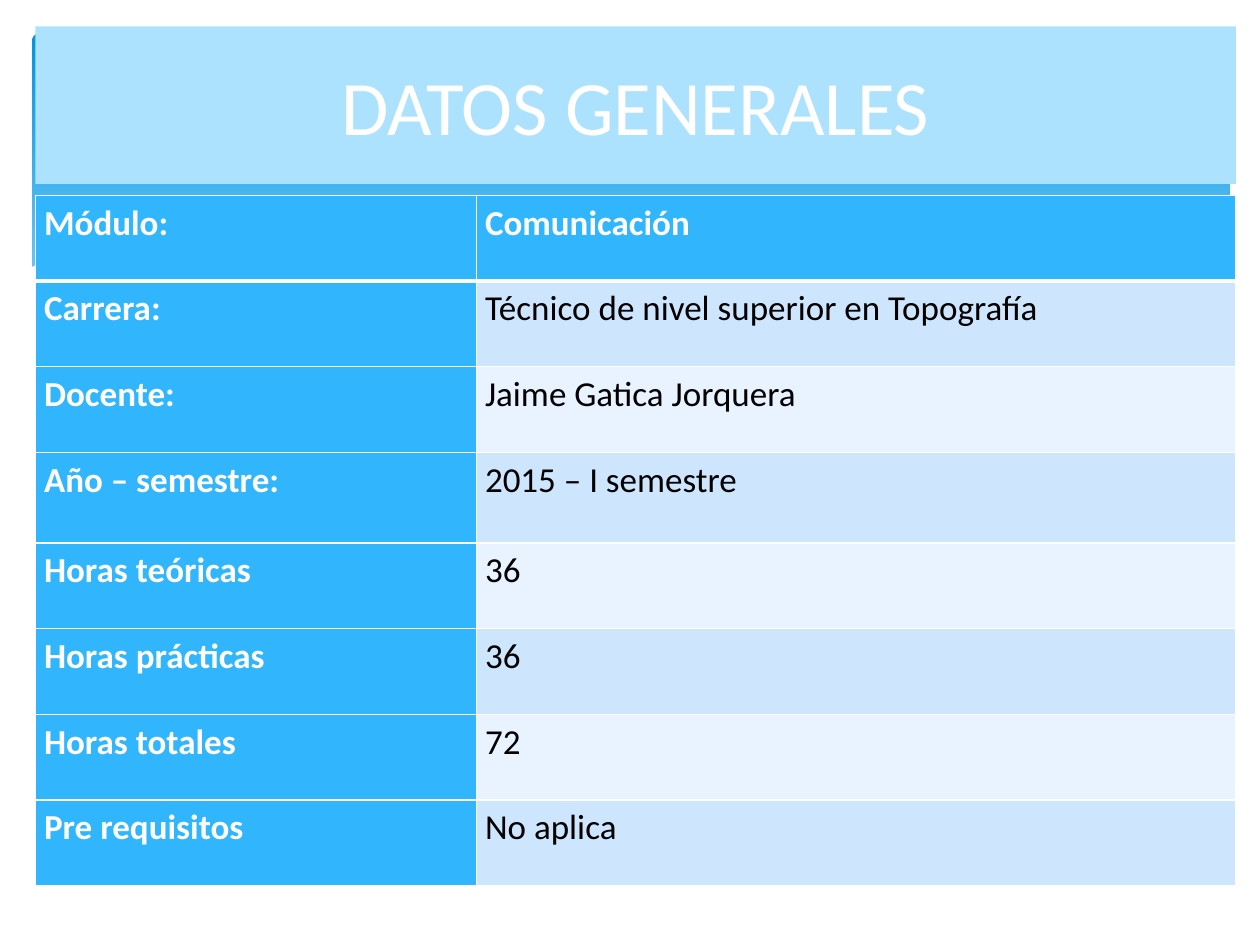
import dataclasses

import pptx
import pptx.dml.color
import pptx.enum.shapes
import pptx.enum.text
import pptx.oxml
import pptx.oxml.ns
import pptx.util

# Grid of 100 columns by 75 rows, each cell 0.1 inch
CELL = pptx.util.Inches(0.1)
FONT = "Calibri"
HUES = {
    "white": "FFFFFF",
    "black": "000000",
    "title": "ADE2FE",
    "head": "31B6FD",
    "odd": "CEE5FE",
    "even": "E8F3FF",
    "deep": "0293E0",
    "pale": "83D3FE",
}
COLS = (35, 60.3)
WAVE = [
    (97.7, 24.6), (95, 25.6), (92, 26.5), (88.7, 27.1), (85, 27.5),
    (80.9, 27.7), (76.1, 27.5), (70.8, 27), (64.8, 26.2), (57.9, 25),
    (50.3, 23.3), (44.7, 22), (39.1, 20.7), (34, 19.7), (29.2, 19),
    (25, 18.6), (21.1, 18.4), (16.1, 18.4), (11.9, 18.7), (8.5, 19.3),
    (5.9, 19.9), (4, 20.5), (2.3, 21.3), (2.3, 32.9), (97.7, 32.9),
]


@dataclasses.dataclass
class Box:
    col: float
    row: float
    wide: float
    high: float

    def place(self) -> tuple:
        return tuple(cells(n) for n in (self.col, self.row, self.wide, self.high))


@dataclasses.dataclass
class Fact:
    label: str
    value: str
    high: float = 6.8


FACTS = [
    Fact("Módulo:", "Comunicación"),
    Fact("Carrera:", "Técnico de nivel superior en Topografía"),
    Fact("Docente:", "Jaime Gatica Jorquera"),
    Fact("Año – semestre:", "2015 – I semestre", 7.2),
    Fact("Horas teóricas", "36"),
    Fact("Horas prácticas", "36"),
    Fact("Horas totales", "72"),
    Fact("Pre requisitos", "No aplica"),
]


def cells(count: float) -> int:
    return pptx.util.Emu(round(count * CELL))


def hue(name: str) -> pptx.dml.color.RGBColor:
    return pptx.dml.color.RGBColor.from_string(HUES[name])


def paint(item, name: str) -> None:
    item.fill.solid()
    item.fill.fore_color.rgb = hue(name)


def style(para, size: float, name: str, bold: bool = False) -> None:
    for run in para.runs:
        run.font.name = FONT
        run.font.size = pptx.util.Pt(size)
        run.font.bold = bold
        run.font.color.rgb = hue(name)


def edge(cell, sides: dict) -> None:
    """Draw white cell borders; schema order puts them before the fill."""
    props = cell._tc.get_or_add_tcPr()
    for spot, (side, width) in enumerate(sides.items()):
        line = pptx.oxml.parse_xml(
            f'<a:ln{side} {pptx.oxml.ns.nsdecls("a")} w="{pptx.util.Pt(width)}">'
            f'<a:solidFill><a:srgbClr val="{HUES["white"]}"/></a:solidFill></a:ln{side}>'
        )
        props.insert(spot, line)


def draw_back(slide) -> None:
    # Gradient panel
    kind = pptx.enum.shapes.MSO_SHAPE.ROUNDED_RECTANGLE
    panel = slide.shapes.add_shape(kind, *Box(2.5, 2.5, 95.1, 27).place())
    panel.adjustments[0] = 0.034
    panel.shadow.inherit = False
    panel.line.fill.background()
    panel.fill.gradient()
    panel.fill.gradient_angle = 270
    for stop, (spot, name) in zip(panel.fill.gradient_stops, [(0, "deep"), (0.9, "pale")]):
        stop.position = spot
        stop.color.rgb = hue(name)

    # White wave over its lower part
    points = [(cells(x), cells(y)) for x, y in WAVE]
    build = slide.shapes.build_freeform(*points[0])
    build.add_line_segments(points[1:], close=True)
    wave = build.convert_to_shape()
    wave.shadow.inherit = False
    wave.line.fill.background()
    paint(wave, "white")


def fill_cell(cell, text: str, row: int, col: int) -> None:
    head = row == 0 or col == 0
    cell.margin_left = cell.margin_right = cells(0.7)
    cell.margin_top = cell.margin_bottom = 0
    paint(cell, "head" if head else "odd" if row % 2 else "even")
    top, low = (3 if row == 1 else 1), (3 if row == 0 else 1)
    edge(cell, {"L": 1, "R": 1, "T": top, "B": low})
    para = cell.text_frame.paragraphs[0]
    para.text = text
    para.line_spacing = 1.15
    para.space_before = para.space_after = pptx.util.Pt(2)
    align = pptx.enum.text.PP_ALIGN
    para.alignment = align.JUSTIFY if col else align.LEFT
    style(para, 20, "white" if head else "black", head)


def draw_table(slide, facts: list[Fact]) -> None:
    box = Box(2.8, 15.5, sum(COLS), sum(fact.high for fact in facts))
    table = slide.shapes.add_table(len(facts), len(COLS), *box.place()).table
    table.horz_banding = False
    for col, wide in enumerate(COLS):
        table.columns[col].width = cells(wide)
    for row, fact in enumerate(facts):
        table.rows[row].height = cells(fact.high)
        for col, text in enumerate((fact.label, fact.value)):
            fill_cell(table.cell(row, col), text, row, col)


def draw_title(slide, text: str) -> None:
    title = slide.shapes.title
    title.left, title.top, title.width, title.height = Box(2.8, 2.1, 95.3, 12.5).place()
    paint(title, "title")
    frame = title.text_frame
    frame.text = text
    frame.word_wrap = True
    frame.vertical_anchor = pptx.enum.text.MSO_ANCHOR.MIDDLE
    frame.paragraphs[0].alignment = pptx.enum.text.PP_ALIGN.CENTER
    style(frame.paragraphs[0], 44, "white")
    # Bring the title in front of the panel
    title.element.getparent().append(title.element)


def main() -> None:
    deck = pptx.Presentation()
    deck.slide_width, deck.slide_height = cells(100), cells(75)
    slide = deck.slides.add_slide(deck.slide_layouts[5])
    draw_back(slide)
    draw_table(slide, FACTS)
    draw_title(slide, "DATOS GENERALES")
    deck.save("out.pptx")


if __name__ == "__main__":
    main()
